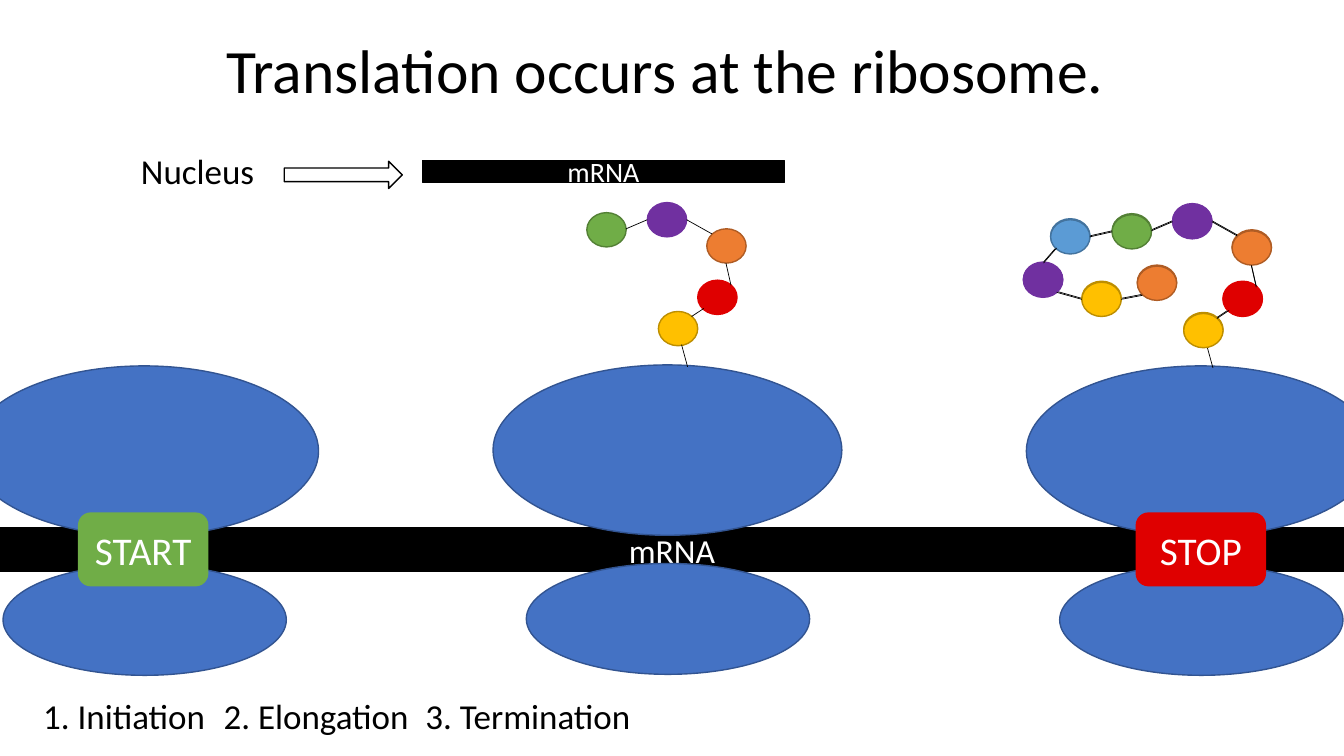
from lxml.etree import SubElement
from pptx import Presentation
from pptx.dml.color import RGBColor
from pptx.enum.shapes import MSO_CONNECTOR, MSO_SHAPE as SHAPE
from pptx.enum.text import MSO_ANCHOR as ANCHOR, MSO_AUTO_SIZE as AUTO, PP_ALIGN as ALIGN
from pptx.oxml.ns import qn
from pptx.util import Inches, Pt

COLORS = {
    "black": "000000", "white": "FFFFFF", "ribosome": "4472C4", "ribosome edge": "325491",
    "purple": "7030A0", "red": "DF0000", "yellow": "FFC000", "yellow edge": "BD8E00",
    "green": "70AD47", "green edge": "538035", "orange": "ED7D31",
    "orange edge": "AF5C24", "blue": "5B9BD5", "blue edge": "43739E",
}
BEAD_SIZE = (0.39, 0.34)

# Amino acids and their links, measured from the left of the green bead and the chain's top
SHORT_BEADS = [("purple", 0.6, 0), ("red", 1.1, 0.77), ("yellow", 0.71, 1.08),
               ("green", 0, 0.1), ("orange", 1.19, 0.26)]
SHORT_LINKS = [(1.04, 1.13, 1.16, 1.05), (1.43, 0.82, 1.38, 0.6),
               (1.24, 0.31, 0.99, 0.17), (0.6, 0.17, 0.39, 0.26)]
TETHER = (0.94, 1.41, 1, 1.63)
LONG_BEADS = [("orange", 0.25, 0.61), ("yellow", -0.3, 0.77), ("purple", -0.88, 0.58),
              ("blue", -0.61, 0.15)] + SHORT_BEADS
LONG_LINKS = SHORT_LINKS + [(0, 0.27, -0.22, 0.32), (-0.55, 0.43, -0.68, 0.58),
                            (-0.3, 0.94, -0.55, 0.87), (0.3, 0.9, 0.09, 0.94)]


def rgb(name):
    return RGBColor.from_string(COLORS[name])


def write(frame, text, size=25, color="black", align=ALIGN.LEFT, anchor=ANCHOR.TOP,
          wrap=True, auto_size=AUTO.NONE, line_spacing=None):
    frame.word_wrap = wrap
    frame.auto_size = auto_size
    frame.vertical_anchor = anchor
    paragraph = frame.paragraphs[0]
    paragraph.alignment = align
    paragraph.line_spacing = line_spacing
    run = paragraph.add_run()
    run.text = text
    run.font.name = "Calibri"
    run.font.size = Pt(size)
    run.font.color.rgb = rgb(color)


def draw(shapes, preset, box, fill=None, edge=None):
    figure = shapes.add_shape(preset, *map(Inches, box))
    figure.shadow.inherit = False
    if fill:
        figure.fill.solid()
        figure.fill.fore_color.rgb = rgb(fill)
    else:
        figure.fill.background()
    figure.line.color.rgb = rgb(edge or fill)
    figure.line.width = Pt(1)
    return figure


def label(shapes, preset, box, fill, text, size):
    figure = draw(shapes, preset, box, fill)
    write(figure.text_frame, text, size=size, color="white",
          align=ALIGN.CENTER, anchor=ANCHOR.MIDDLE)


def caption(shapes, box, text, wrap=True):
    words = shapes.add_textbox(*map(Inches, box))
    write(words.text_frame, text, wrap=wrap, auto_size=AUTO.SHAPE_TO_FIT_TEXT)


def ribosome(shapes, left, top):
    for box in ((left, top, 3.46, 1.69), (left + 0.33, top + 1.97, 2.81, 1.1)):
        draw(shapes, SHAPE.OVAL, box, "ribosome", "ribosome edge")


def peptide(shapes, left, top, beads, links):
    for color, dx, dy in beads:
        edge = color + " edge"
        draw(shapes, SHAPE.OVAL, (left + dx, top + dy, *BEAD_SIZE), color,
             edge if edge in COLORS else color)
    for x1, y1, x2, y2 in links:
        ends = (left + x1, top + y1, left + x2, top + y2)
        link = shapes.add_connector(MSO_CONNECTOR.STRAIGHT, *map(Inches, ends))
        link.line.color.rgb = rgb("black")
        link.line.width = Pt(0.5)
        SubElement(link._element.spPr, qn("a:effectLst"))


def heading(slide, box):
    title = slide.shapes.title
    title.left, title.top, title.width, title.height = map(Inches, box)
    # The closing space is part of the centred line
    write(title.text_frame, "Translation occurs at the ribosome. ", size=44,
          align=ALIGN.CENTER, anchor=ANCHOR.MIDDLE, line_spacing=0.9)


def translation(shapes, top):
    # mRNA strand behind the three ribosomes
    label(shapes, SHAPE.RECTANGLE, (0, top + 1.61, 13.33, 0.43), "black", "mRNA", 24)

    # Elongation
    elongation = shapes.add_group_shape().shapes
    ribosome(elongation, 4.89, top - 0.01)
    peptide(elongation, 5.82, top - 1.62, SHORT_BEADS, SHORT_LINKS + [TETHER])

    # Termination
    termination = shapes.add_group_shape().shapes
    ribosome(termination, 10.18, top)
    peptide(termination, 11.03, top - 1.61, LONG_BEADS, LONG_LINKS + [TETHER])

    # Initiation
    ribosome(shapes.add_group_shape().shapes, -0.3, top)

    # Codons
    for left, color, codon in ((0.78, "green", "START"), (11.27, "red", "STOP")):
        label(shapes, SHAPE.ROUNDED_RECTANGLE, (left, top + 1.46, 1.28, 0.72),
              color, codon, 28)

    # Finished protein, lying over the chain on the last ribosome
    peptide(shapes.add_group_shape().shapes, 11.03, top - 1.6, LONG_BEADS, LONG_LINKS)


def steps(shapes, top):
    for left, width, text in ((0.33, 2.08, "1. Initiation"), (2.12, 2.24, "2. Elongation"),
                              (4.12, 2.41, "3. Termination")):
        caption(shapes, (left, top, width, 0.52), text)


def export(shapes, left, top):
    caption(shapes, (left, top, 1.33, 0.52), "Nucleus", wrap=False)
    draw(shapes, SHAPE.RIGHT_ARROW, (left + 1.52, top + 0.17, 1.17, 0.27), edge="black")
    label(shapes, SHAPE.RECTANGLE, (left + 2.89, top + 0.16, 3.59, 0.22),
          "black", "mRNA", 20)


def main():
    deck = Presentation()
    deck.slide_width, deck.slide_height = Inches(13.33), Inches(7.5)
    slide = deck.slides.add_slide(deck.slide_layouts[5])
    heading(slide, (0.92, 0, 11.5, 1.45))
    translation(slide.shapes, 3.63)
    steps(slide.shapes, 6.84)
    export(slide.shapes, 1.3, 1.43)
    deck.save("out.pptx")


if __name__ == "__main__":
    main()
